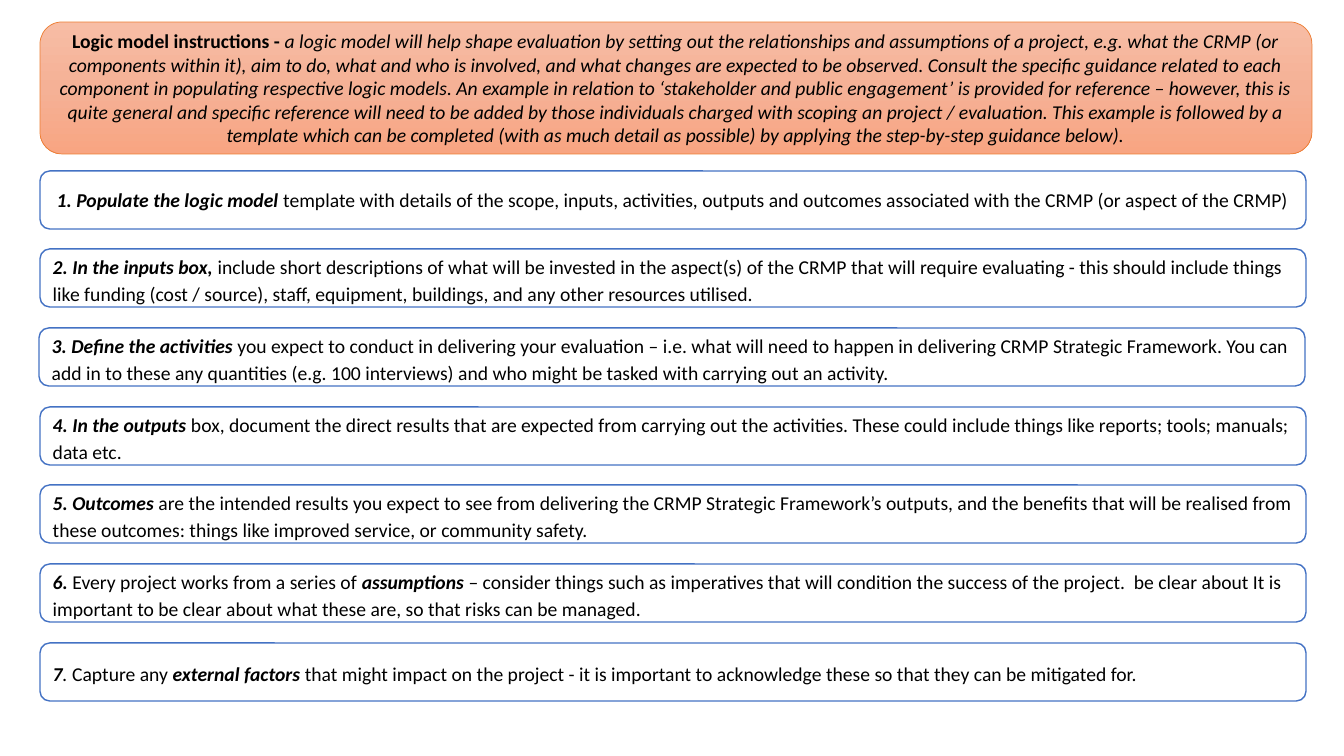
from copy import deepcopy

from pptx import Presentation
from pptx.dml.color import RGBColor
from pptx.enum.shapes import MSO_SHAPE as SHAPE
from pptx.enum.text import MSO_ANCHOR as ANCHOR, PP_ALIGN as ALIGN
from pptx.util import Pt

EMU_PER_PX = 914400 / 100.8
COLORS = {
    "text": "000000", "box": "FFFFFF", "box_line": "4472C4", "header_line": "ED7D31",
    "light": "F7BDA5", "middle": "F5B196", "dark": "F8A582",
}
HEADER = [
    ("Logic model instructions - ", "b"),
    ("a logic model will help shape evaluation by setting out the relationships and assumptions of a "
     "project, e.g. what the CRMP (or components within it), aim to do, what and who is involved, and "
     "what changes are expected to be observed. Consult the specific guidance related to each component "
     "in populating respective logic models. An example in relation to ‘stakeholder and public "
     "engagement’ is provided for reference – however, this is quite general and specific reference "
     "will need to be added by those individuals charged with scoping an project / evaluation. This "
     "example is followed by a template which can be completed (with as much detail as possible) by "
     "applying the step-by-step guidance below).", "i"),
]
STEPS = [
    [("1. Populate the logic model ", "bi"),
     ("template with details of the scope, inputs, activities, outputs and outcomes associated with "
      "the CRMP (or aspect of the CRMP)", "")],
    [("2. In the inputs box, ", "bi"),
     ("include short descriptions of what will be invested in the aspect(s) of the CRMP that will "
      "require evaluating - this should include things like funding (cost / source), staff, equipment, "
      "buildings, and any other resources utilised.", "")],
    [("3. Define the activities", "bi"),
     (" you expect to conduct in delivering your evaluation – i.e. what will need to happen in "
      "delivering CRMP Strategic Framework. You can add in to these any quantities (e.g. 100 "
      "interviews) and who might be tasked with carrying out an activity.", "")],
    [("4. In the outputs", "bi"),
     (" box, document the direct results that are expected from carrying out the activities. These "
      "could include things like reports; tools; manuals; data etc.", "")],
    [("5. Outcomes ", "bi"),
     ("are the intended results you expect to see from delivering the CRMP Strategic Framework’s "
      "outputs, and the benefits that will be realised from these outcomes: things like improved "
      "service, or community safety.", "")],
    [("6. ", "bi"), ("Every project works from a series of ", ""), ("assumptions ", "bi"),
     ("– consider things such as imperatives that will condition the success of the project.  be "
      "clear about It is important to be clear about what these are, so that risks can be managed.", "")],
    [("7", "bi"), (". ", "i"), ("Capture any ", ""), ("external factors ", "bi"),
     ("that might impact on the project - it is important to acknowledge these so that they can be "
      "mitigated for.", "")],
]


def px(n):
    """Turn pixels into EMU."""
    return round(n * EMU_PER_PX)


def rgb(name):
    """Look up a colour by name."""
    return RGBColor.from_string(COLORS[name])


def add_box(s, left, top, width, height, line, line_pt):
    """Add a rounded box with a white fill."""
    sp = s.shapes.add_shape(SHAPE.ROUNDED_RECTANGLE, px(left), px(top), px(width), px(height))
    sp.shadow.inherit = False
    sp.fill.solid()
    sp.fill.fore_color.rgb = rgb("box")
    sp.line.color.rgb = rgb(line)
    sp.line.width = Pt(line_pt)
    return sp


def shade(sp):
    """Fill a box from light at the top to dark at the bottom."""
    sp.fill.gradient()
    sp.fill.gradient_angle = 270
    first = sp.fill.gradient_stops[0]
    gs = sp._element.spPr.xpath(".//a:gs")[0]
    gs.addnext(deepcopy(gs))
    for stop, name, position in zip(sp.fill.gradient_stops, ("light", "middle", "dark"), (0, 0.5, 1)):
        stop.color.rgb = rgb(name)
        stop.position = position


def write(sp, runs, centred):
    """Write styled runs as one paragraph in a box."""
    tf = sp.text_frame
    tf.word_wrap = True
    tf.vertical_anchor = ANCHOR.MIDDLE
    p = tf.paragraphs[0]
    p.alignment = ALIGN.CENTER if centred else ALIGN.LEFT
    if not centred:
        p.line_spacing = 1.15
        p.space_before, p.space_after = Pt(12), Pt(6)
    p.font.name = "Calibri"
    p.font.size = Pt(14)
    p.font.color.rgb = rgb("text")
    for text, style in runs:
        r = p.add_run()
        r.text = text
        r.font.bold = "b" in style
        r.font.italic = "i" in style


def main():
    """Build the logic model instructions slide."""
    prs = Presentation()
    prs.slide_width, prs.slide_height = px(1344), px(756)
    s = prs.slides.add_slide(prs.slide_layouts[6])
    header = add_box(s, 40, 22, 1272, 132, "header_line", 0.5)
    shade(header)
    write(header, HEADER, centred=True)
    for i, runs in enumerate(STEPS):
        left = 39 if i == 2 else 40
        box = add_box(s, left, 171 + i * 236 // 3, 1266, 58, "box_line", 1)
        write(box, runs, centred=i == 0)
    prs.save("out.pptx")


if __name__ == "__main__":
    main()
